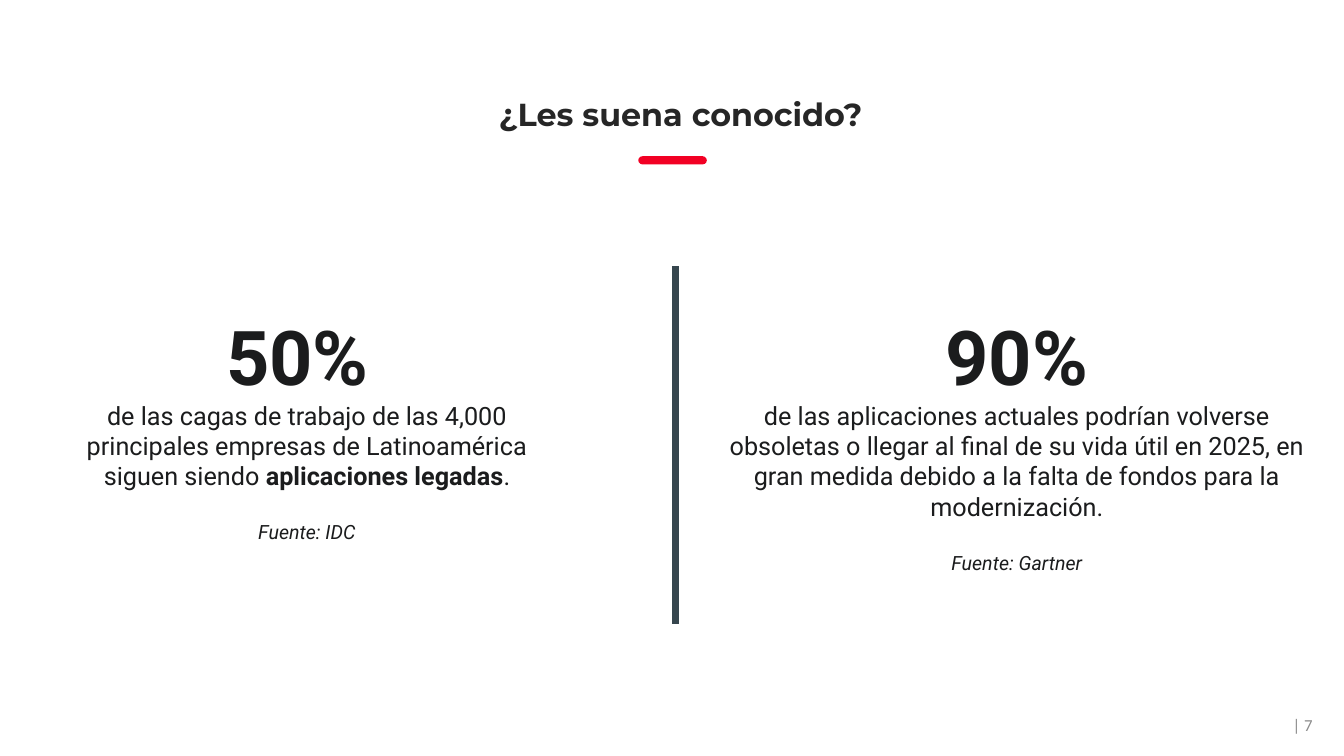
from lxml.etree import SubElement
from pptx import Presentation
from pptx.dml.color import RGBColor
from pptx.enum.shapes import MSO_CONNECTOR, MSO_SHAPE
from pptx.enum.text import MSO_ANCHOR, MSO_AUTO_SIZE, PP_ALIGN
from pptx.oxml.ns import qn
from pptx.util import Inches, Pt

presentation = Presentation()
presentation.slide_width = Inches(13.33)
presentation.slide_height = Inches(7.5)
TWO_CONTENT = 3
slide = presentation.slides.add_slide(presentation.slide_layouts[TWO_CONTENT])
title, left_body, right_body = slide.placeholders


def box(left, top, width, height):
    """Turn percentages of the slide's size into lengths."""
    across = presentation.slide_width / 100
    down = presentation.slide_height / 100
    return int(left * across), int(top * down), int(width * across), int(height * down)


def add_run(paragraph, text, color, **formats):
    run = paragraph.add_run()
    run.text = text
    run.font.color.rgb = RGBColor.from_string(color)
    for name, value in formats.items():
        setattr(run.font, name, value)


# Title and page number
page_number = slide.shapes.add_textbox(*box(92.65, 92.13, 6, 7.6))
title.left, title.top, title.width, title.height = box(7.2, 6.67, 86.87, 16.67)
for shape, text, align, color, formats in (
    (title, "¿Les suena conocido?", PP_ALIGN.CENTER, "262626",
     {"name": "Montserrat", "size": Pt(22.7), "bold": True}),
    (page_number, "| 7", PP_ALIGN.RIGHT, "8C8C8C", {"name": "Calibri", "size": Pt(12)}),
):
    frame = shape.text_frame
    frame.word_wrap = True
    frame.auto_size = MSO_AUTO_SIZE.NONE
    frame.vertical_anchor = MSO_ANCHOR.MIDDLE
    for side in ("left", "top", "right", "bottom"):
        setattr(frame, f"margin_{side}", Inches(0.13))
    frame.paragraphs[0].alignment = align
    add_run(frame.paragraphs[0], text, color, **formats)

# Red accent under the title
accent = slide.shapes.add_shape(MSO_SHAPE.ROUNDED_RECTANGLE, *box(47.49, 20.67, 5.1, 1.07))
accent.adjustments[0] = 0.5
accent.shadow.inherit = False
accent.fill.solid()
accent.fill.fore_color.rgb = RGBColor.from_string("F20024")
accent.line.fill.background()

# Divider between the two figures
x, top, _, height = box(50.26, 35.2, 0, 47.3)
divider = slide.shapes.add_connector(MSO_CONNECTOR.STRAIGHT, x, top + height, x, top)
divider.line.color.rgb = RGBColor.from_string("36464E")
divider.line.width = Pt(4.5)
SubElement(divider._element.spPr, qn("a:effectLst"))

# Figures: each paragraph is (space before, size, italic, [(text, bold), ...])
figures = (
    (left_body, box(3.75, 40.27, 38.18, 32.8), "50% ",
     [("de las cagas de trabajo de las 4,000 principales empresas de Latinoamérica "
       "siguen siendo ", False), ("aplicaciones legadas", True), (".", False)],
     "Fuente: IDC"),
    (right_body, box(52.59, 40.27, 46.14, 45.73), "90%",
     [("de las aplicaciones actuales podrían volverse obsoletas o llegar al final de su "
       "vida útil en 2025, en gran medida debido a la falta de fondos para la "
       "modernización.", False)],
     "Fuente: Gartner"),
)
for body, area, percentage, statement, source in figures:
    body.left, body.top, body.width, body.height = area
    frame = body.text_frame
    frame.word_wrap = True
    frame.auto_size = MSO_AUTO_SIZE.NONE
    frame.vertical_anchor = MSO_ANCHOR.TOP
    rows = (
        (0, 54, False, [(percentage, True)]),
        (0, 18, False, statement),
        (21, 14, True, [(source, False)]),
    )
    for index, (space, size, italic, runs) in enumerate(rows):
        paragraph = frame.add_paragraph() if index else frame.paragraphs[0]
        paragraph.alignment = PP_ALIGN.CENTER
        paragraph.space_before = Pt(space)
        properties = paragraph._p.get_or_add_pPr()
        properties.set("marL", "0")
        properties.set("indent", "0")
        SubElement(properties, qn("a:buNone"))
        for text, bold in runs:
            add_run(paragraph, text, "1B1C1D", name="Roboto", size=Pt(size),
                    bold=bold, italic=italic)

presentation.save("out.pptx")
